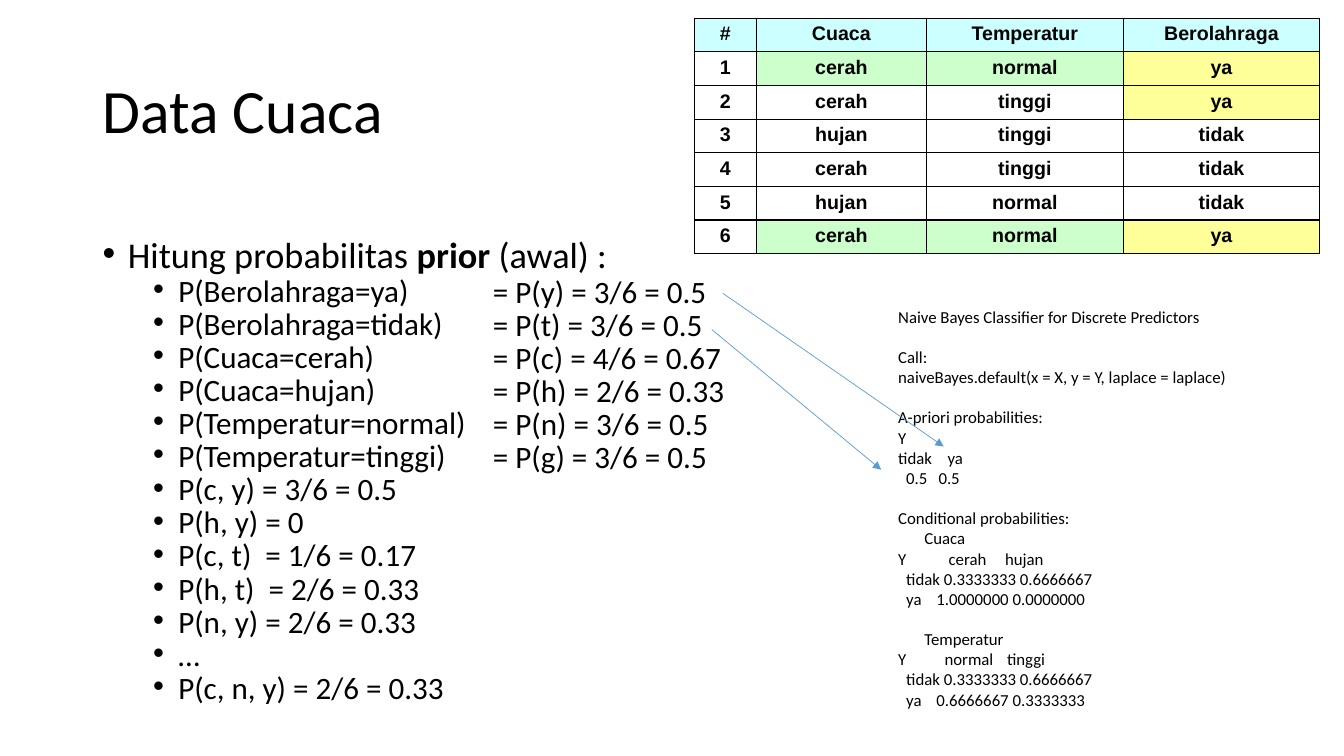
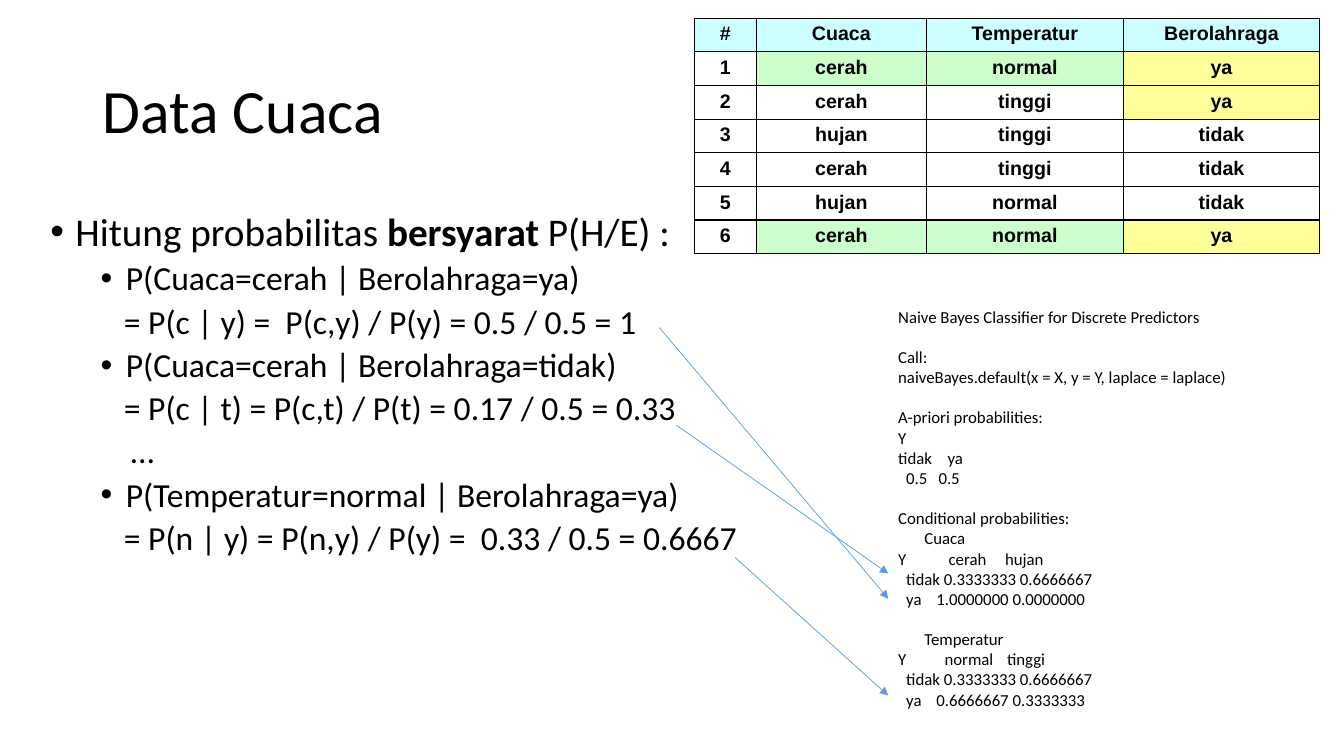
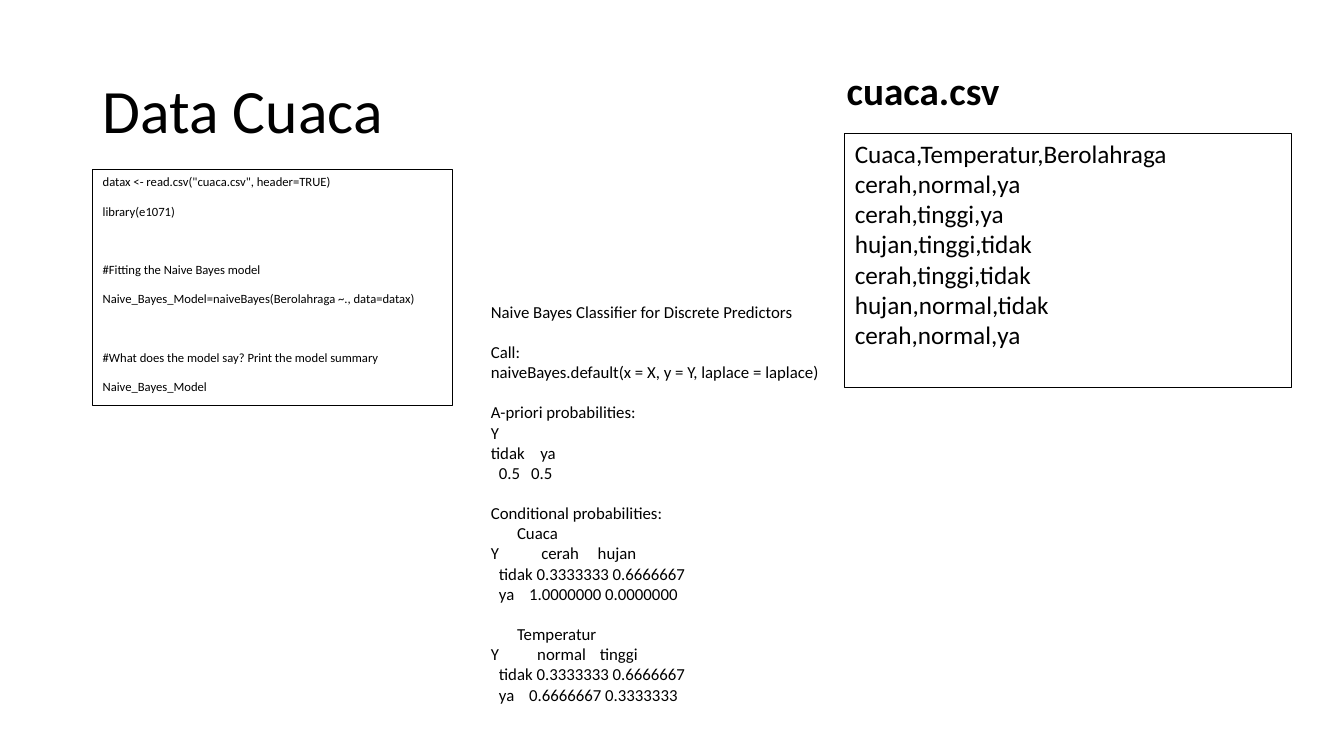
from dataclasses import dataclass

from lxml import etree
from pptx import Presentation
from pptx.dml.color import RGBColor
from pptx.enum.shapes import MSO_CONNECTOR, MSO_SHAPE
from pptx.enum.text import MSO_ANCHOR, PP_ALIGN
from pptx.oxml.ns import qn
from pptx.shapes.base import BaseShape
from pptx.slide import Slide
from pptx.util import Inches, Pt

STRAIGHT = MSO_CONNECTOR.STRAIGHT
RECTANGLE = MSO_SHAPE.RECTANGLE
TOP, MIDDLE = MSO_ANCHOR.TOP, MSO_ANCHOR.MIDDLE
LEFT, CENTER = PP_ALIGN.LEFT, PP_ALIGN.CENTER

# Shared look
BLACK, ARROW_BLUE = "000000", "5B9BD5"
HEADER_FILL, MATCH_FILL, YES_FILL = "CCFFFF", "CCFFCC", "FFFF99"
BODY_FONT, TABLE_FONT = "Calibri", "Arial"
OUTPUT_SIZE, OUTPUT_GAP = 12, 14.4


@dataclass(frozen=True)
class Box:
    left: float
    top: float
    width: float
    height: float


@dataclass(frozen=True)
class Line:
    text: str
    size: float
    bold_part: str = ""
    before: float = 0
    spacing: float = 1.0
    margin: float = 0
    bullet: bool = False
    tabs: tuple[float, ...] = ()


@dataclass(frozen=True)
class Arrow:
    start: tuple[float, float]
    end: tuple[float, float]


# Content
WEATHER_ROWS = [
    ("#", "Cuaca", "Temperatur", "Berolahraga"),
    ("1", "cerah", "normal", "ya"),
    ("2", "cerah", "tinggi", "ya"),
    ("3", "hujan", "tinggi", "tidak"),
    ("4", "cerah", "tinggi", "tidak"),
    ("5", "hujan", "normal", "tidak"),
    ("6", "cerah", "normal", "ya"),
]
COLUMN_WIDTHS = (0.61, 1.69, 1.95, 1.95)
ROW_HEIGHT = 0.33


def output_line(text: str, *tabs: float, gap: bool = False) -> Line:
    return Line(text, OUTPUT_SIZE, before=OUTPUT_GAP if gap else 0, tabs=tabs)


MODEL_OUTPUT = [
    output_line("Naive Bayes Classifier for Discrete Predictors"),
    output_line("Call:", gap=True),
    output_line("naiveBayes.default(x = X, y = Y, laplace = laplace)"),
    output_line("A-priori probabilities:", gap=True),
    output_line("Y"),
    output_line("tidak\tya", 0.49),
    output_line("\t0.5\t0.5", 0.08, 0.4),
    output_line("Conditional probabilities:", gap=True),
    output_line("\tCuaca", 0.26),
    output_line("Y\tcerah\thujan", 0.5, 1.06),
    output_line("\ttidak 0.3333333 0.6666667", 0.08),
    output_line("\tya\t1.0000000 0.0000000", 0.08, 0.38),
    output_line("\tTemperatur", 0.26, gap=True),
    output_line("Y\tnormal\ttinggi", 0.46, 1.08),
    output_line("\ttidak 0.3333333 0.6666667", 0.08),
    output_line("\tya\t0.6666667 0.3333333", 0.08, 0.38),
]

PRIORS = [
    ("P(Berolahraga=ya)", "= P(y) = 3/6 = 0.5"),
    ("P(Berolahraga=tidak)", "= P(t) = 3/6 = 0.5"),
    ("P(Cuaca=cerah)", "= P(c) = 4/6 = 0.67"),
    ("P(Cuaca=hujan)", "= P(h) = 2/6 = 0.33"),
    ("P(Temperatur=normal)", "= P(n) = 3/6 = 0.5"),
    ("P(Temperatur=tinggi)", "= P(g) = 3/6 = 0.5"),
]
JOINT_PROBABILITIES = [
    "P(c, y) = 3/6 = 0.5",
    "P(h, y) = 0",
    "P(c, t)  = 1/6 = 0.17",
    "P(h, t)  = 2/6 = 0.33",
    "P(n, y) = 2/6 = 0.33",
    "…",
    "P(c, n, y) = 2/6 = 0.33",
]
CONDITIONALS = [
    ("P(Cuaca=cerah | Berolahraga=ya)", 0.75),
    ("= P(c | y) =  P(c,y) / P(y) = 0.5 / 0.5 = 1", 0.73),
    ("P(Cuaca=cerah | Berolahraga=tidak)", 0.75),
    ("= P(c | t) = P(c,t) / P(t) = 0.17 / 0.5 = 0.33", 0.73),
    ("…", 0.8),
    ("P(Temperatur=normal | Berolahraga=ya)", 0.75),
    ("= P(n | y) = P(n,y) / P(y) =  0.33 / 0.5 = 0.6667", 0.73),
]
CODE_LINES = [
    ('datax <- read.csv("cuaca.csv", header=TRUE)', 0),
    ("library(e1071)", 10),
    ("#Fitting the Naive Bayes model", 31),
    ("Naive_Bayes_Model=naiveBayes(Berolahraga ~., data=datax)", 10),
    ("#What does the model say? Print the model summary", 31),
    ("Naive_Bayes_Model", 10),
]

PRIOR_ARROWS = [Arrow((7.17, 2.91), (9.36, 4.43)), Arrow((7.06, 3.27), (8.74, 4.66))]
CONDITIONAL_ARROWS = [
    Arrow((6.54, 3.25), (8.81, 5.94)),
    Arrow((6.71, 4.22), (8.81, 5.69)),
    Arrow((7.29, 5.53), (8.81, 6.9)),
]


# Drawing helpers
def color(value: str) -> RGBColor:
    return RGBColor.from_string(value)


def write_lines(shape: BaseShape, lines: list[Line], anchor=TOP, bold: bool = False) -> None:
    frame = shape.text_frame
    frame.word_wrap = True
    frame.vertical_anchor = anchor
    for index, line in enumerate(lines):
        paragraph = frame.add_paragraph() if index else frame.paragraphs[0]
        paragraph.alignment = LEFT
        paragraph.line_spacing = line.spacing
        paragraph.space_before = Pt(line.before)
        # The bold part, if any, gets a run of its own
        head, part, tail = line.text.partition(line.bold_part) if line.bold_part else (line.text, "", "")
        for text in filter(None, (head, part, tail)):
            run = paragraph.add_run()
            run.text = text
            run.font.name = BODY_FONT
            run.font.size = Pt(line.size)
            run.font.color.rgb = color(BLACK)
            run.font.bold = bold or text == line.bold_part
        properties = paragraph._p.get_or_add_pPr()
        if line.margin:
            properties.set("marL", str(Inches(line.margin)))
            properties.set("indent", str(Inches(-0.25 if line.bullet else 0)))
        if line.bullet:
            etree.SubElement(properties, qn("a:buFont"), typeface="Arial")
            etree.SubElement(properties, qn("a:buChar"), char="•")
        if line.tabs:
            tab_list = etree.SubElement(properties, qn("a:tabLst"))
            for position in line.tabs:
                etree.SubElement(tab_list, qn("a:tab"), pos=str(Inches(position)), algn="l")


def place(box: Box) -> tuple[int, int, int, int]:
    return Inches(box.left), Inches(box.top), Inches(box.width), Inches(box.height)


def add_text(slide: Slide, box: Box, lines: list[Line], anchor=TOP, bold: bool = False) -> None:
    write_lines(slide.shapes.add_textbox(*place(box)), lines, anchor, bold)


def add_framed_text(slide: Slide, box: Box, lines: list[Line]) -> None:
    shape = slide.shapes.add_shape(RECTANGLE, *place(box))
    shape.shadow.inherit = False
    shape.fill.background()
    shape.line.color.rgb = color(BLACK)
    shape.line.width = Pt(0.75)
    write_lines(shape, lines)


def add_arrow(slide: Slide, arrow: Arrow) -> None:
    points = [Inches(value) for value in arrow.start + arrow.end]
    connector = slide.shapes.add_connector(STRAIGHT, *points)
    connector.line.color.rgb = color(ARROW_BLUE)
    connector.line.width = Pt(0.5)
    etree.SubElement(connector.line._get_or_add_ln(), qn("a:tailEnd"), type="triangle")
    etree.SubElement(connector._element.spPr, qn("a:effectLst"))


def cell_fill(row: int, column: int) -> str | None:
    values = WEATHER_ROWS[row]
    if row == 0:
        return HEADER_FILL
    if column == 3 and values[3] == "ya":
        return YES_FILL
    if column in (1, 2) and values[1:3] == ("cerah", "normal"):
        return MATCH_FILL
    return None


def add_borders(cell) -> None:
    properties = cell._tc.get_or_add_tcPr()
    for index, side in enumerate(("lnL", "lnR", "lnT", "lnB")):
        border = etree.Element(qn(f"a:{side}"), w=str(Pt(1)))
        fill = etree.SubElement(border, qn("a:solidFill"))
        etree.SubElement(fill, qn("a:srgbClr"), val=BLACK)
        properties.insert(index, border)


def add_weather_table(slide: Slide) -> None:
    box = Box(6.89, 0.18, sum(COLUMN_WIDTHS), ROW_HEIGHT * len(WEATHER_ROWS))
    table = slide.shapes.add_table(len(WEATHER_ROWS), len(COLUMN_WIDTHS), *place(box)).table
    table.first_row = table.horz_banding = False
    for column, width in zip(table.columns, COLUMN_WIDTHS):
        column.width = Inches(width)
    for row, values in enumerate(WEATHER_ROWS):
        for column, text in enumerate(values):
            cell = table.cell(row, column)
            fill = cell_fill(row, column)
            if fill:
                cell.fill.solid()
                cell.fill.fore_color.rgb = color(fill)
            else:
                cell.fill.background()
            add_borders(cell)
            cell.text_frame.text = text
            paragraph = cell.text_frame.paragraphs[0]
            paragraph.alignment = CENTER
            font = paragraph.runs[0].font
            font.name, font.size, font.bold = TABLE_FONT, Pt(14), True
            font.color.rgb = color(BLACK)


def add_titled_slide(presentation) -> Slide:
    slide = presentation.slides.add_slide(presentation.slide_layouts[6])
    add_text(slide, Box(0.92, 0.4, 11.5, 1.45), [Line("Data Cuaca", 44, spacing=0.9)], MIDDLE)
    return slide


def add_model_output(slide: Slide, left: float, top: float) -> None:
    add_text(slide, Box(left, top, 3.61, 4.14), MODEL_OUTPUT)


# Slides
def build_prior_slide(presentation) -> None:
    slide = add_titled_slide(presentation)
    add_model_output(slide, 8.81, 2.99)
    add_weather_table(slide)
    heading = Line("Hitung probabilitas prior (awal) :", 25.9, "prior",
                   spacing=0.7, margin=0.25, bullet=True)
    names = [name for name, _ in PRIORS] + JOINT_PROBABILITIES
    bullets = [Line(text, 22.2, before=5, spacing=0.7, margin=0.75, bullet=True) for text in names]
    add_text(slide, Box(0.92, 2.37, 7.6, 4.76), [heading] + bullets)
    # Values line up in their own column beside the prior names
    values = [Line(value, 22.2, before=5 if index else 0, spacing=0.7)
              for index, (_, value) in enumerate(PRIORS)]
    add_text(slide, Box(4.79, 2.75, 2.8, 2.05), values)
    for arrow in PRIOR_ARROWS:
        add_arrow(slide, arrow)


def build_conditional_slide(presentation) -> None:
    slide = add_titled_slide(presentation)
    add_model_output(slide, 8.81, 2.99)
    add_weather_table(slide)
    heading = Line("Hitung probabilitas bersyarat P(H/E) :", 28, "bersyarat",
                   spacing=0.9, margin=0.25, bullet=True)
    steps = [Line(text, 24, before=5, spacing=0.9, margin=margin, bullet=text.startswith("P("))
             for text, margin in CONDITIONALS]
    add_text(slide, Box(0.4, 2.06, 7.89, 4.76), [heading] + steps)
    for arrow in CONDITIONAL_ARROWS:
        add_arrow(slide, arrow)


def build_code_slide(presentation) -> None:
    slide = add_titled_slide(presentation)
    code = [Line(text, 9, before=before) for text, before in CODE_LINES]
    add_framed_text(slide, Box(0.92, 1.68, 3.57, 2.34), code)
    records = [",".join(row[1:]) for row in WEATHER_ROWS]
    # The file lists its fourth and fifth records in the opposite order
    records[4], records[5] = "cerah,tinggi,tidak", "hujan,normal,tidak"
    add_framed_text(slide, Box(8.38, 1.32, 4.43, 2.52), [Line(record, 18) for record in records])
    add_text(slide, Box(8.3, 0.61, 3.03, 0.57), [Line("cuaca.csv", 28)], bold=True)
    add_model_output(slide, 4.77, 2.94)


def main() -> None:
    presentation = Presentation()
    presentation.slide_width = Inches(13.33)
    presentation.slide_height = Inches(7.5)
    build_prior_slide(presentation)
    build_conditional_slide(presentation)
    build_code_slide(presentation)
    presentation.save("out.pptx")


if __name__ == "__main__":
    main()
